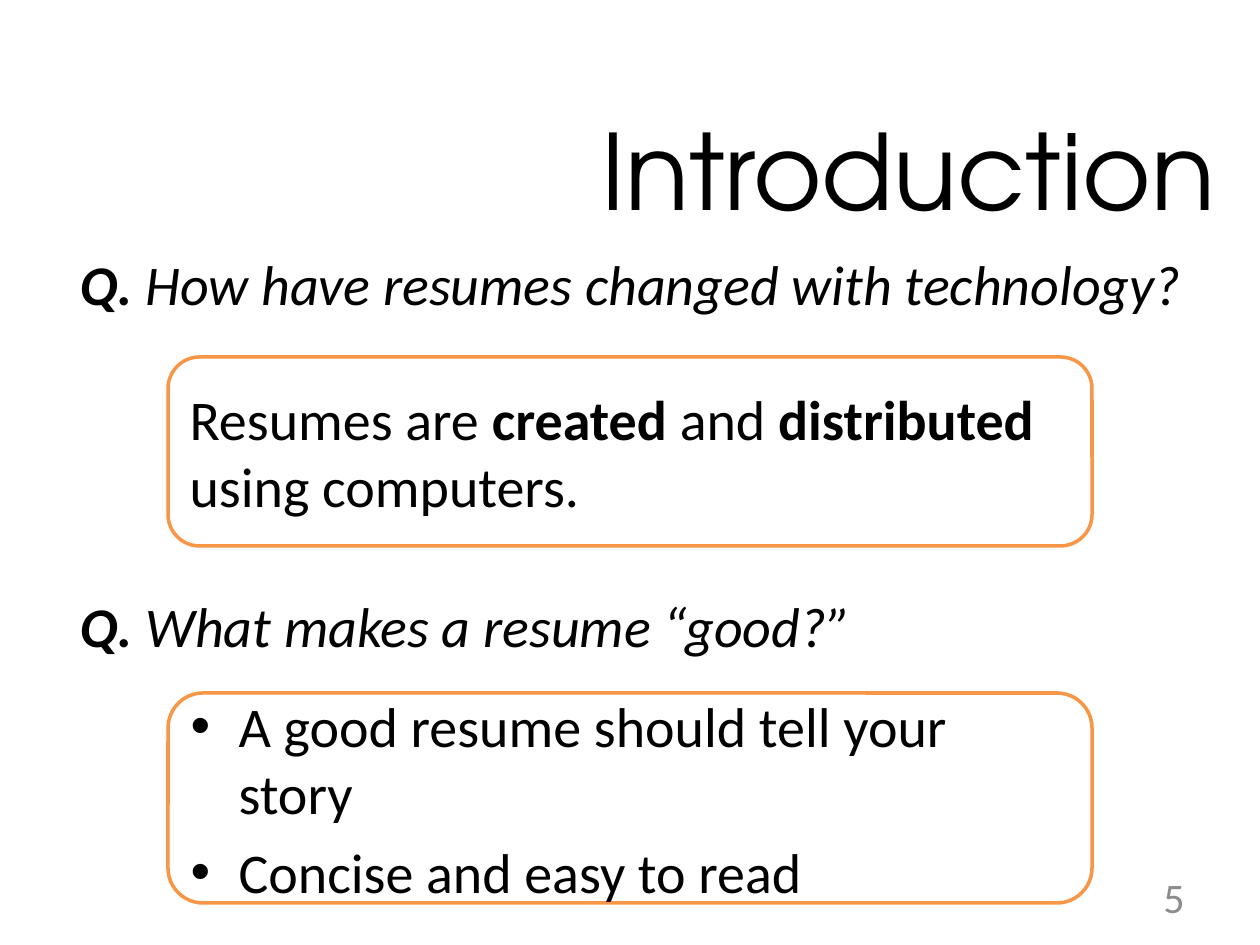
import lxml.etree
import pptx
import pptx.dml.color
import pptx.enum.shapes
import pptx.enum.text
import pptx.oxml.ns
import pptx.util

BLACK = pptx.dml.color.RGBColor(0x00, 0x00, 0x00)
WHITE = pptx.dml.color.RGBColor(0xFF, 0xFF, 0xFF)
ORANGE = pptx.dml.color.RGBColor(0xF7, 0x96, 0x46)
GRAY = pptx.dml.color.RGBColor(0x8C, 0x8C, 0x8C)
ALIGN = pptx.enum.text.PP_ALIGN
FORM = pptx.enum.shapes.MSO_SHAPE
WIDE, HIGH = 10, 7.5
COLS, ROWS = 120, 90


def place(col, row, cols, rows):
    wide, high = WIDE / COLS, HIGH / ROWS
    return [pptx.util.Inches(n) for n in (col * wide, row * high, cols * wide, rows * high)]


def bullet(para):
    props = para._p.get_or_add_pPr()
    indent = pptx.util.Inches(0.38)
    props.set("marL", str(indent))
    props.set("indent", str(-indent))
    font = lxml.etree.SubElement(props, pptx.oxml.ns.qn("a:buFont"))
    font.set("typeface", "Arial")
    mark = lxml.etree.SubElement(props, pptx.oxml.ns.qn("a:buChar"))
    mark.set("char", "•")


def write(shape, *lines, size=32, face="Calibri", color=BLACK, align=ALIGN.LEFT,
          slant=False, list_style=False):
    frame = shape.text_frame
    frame.word_wrap = True
    frame.vertical_anchor = pptx.enum.text.MSO_ANCHOR.MIDDLE
    for index, line in enumerate(lines):
        para = frame.add_paragraph() if index else frame.paragraphs[0]
        para.alignment = align
        if index:
            para.space_before = pptx.util.Pt(size * 0.2)
        if list_style:
            bullet(para)
        for turn, part in enumerate(line.split("*")):
            if part:
                run = para.add_run()
                run.text = part
                run.font.size = pptx.util.Pt(size)
                run.font.name = face
                run.font.color.rgb = color
                run.font.bold = turn % 2 == 1
                run.font.italic = slant


def label(slide, spot, text, **style):
    write(slide.shapes.add_textbox(*place(*spot)), text, **style)


def panel(slide, form, spot):
    shape = slide.shapes.add_shape(form, *place(*spot))
    shape.shadow.inherit = False
    shape.fill.solid()
    shape.fill.fore_color.rgb = WHITE
    return shape


def query(slide, row, text):
    shape = panel(slide, FORM.RECTANGLE, (6.4, row, 109, 11))
    shape.line.fill.background()
    write(shape, "*Q. *" + text, slant=True)


def answer(slide, row, rows, *lines, **style):
    shape = panel(slide, FORM.ROUNDED_RECTANGLE, (16, row, 88, rows))
    shape.line.color.rgb = ORANGE
    shape.line.width = pptx.util.Pt(2)
    write(shape, *lines, **style)


def main():
    deck = pptx.Presentation()
    deck.slide_width = pptx.util.Inches(WIDE)
    deck.slide_height = pptx.util.Inches(HIGH)
    slide = deck.slides.add_slide(deck.slide_layouts[6])
    label(slide, (53, 5, 67, 22), "Introduction", size=60,
          face="TeX Gyre Adventor", align=ALIGN.CENTER)
    answer(slide, 34, 18, "Resumes are *created* and *distributed* using computers.")
    query(slide, 21.5, "How have resumes changed with technology?")
    answer(slide, 66, 20, "A good resume should tell your story",
           "Concise and easy to read", list_style=True)
    query(slide, 54, "What makes a resume “good?”")
    label(slide, (86, 83, 28, 4.8), "5", size=24, color=GRAY, align=ALIGN.RIGHT)
    deck.save("out.pptx")


if __name__ == "__main__":
    main()
